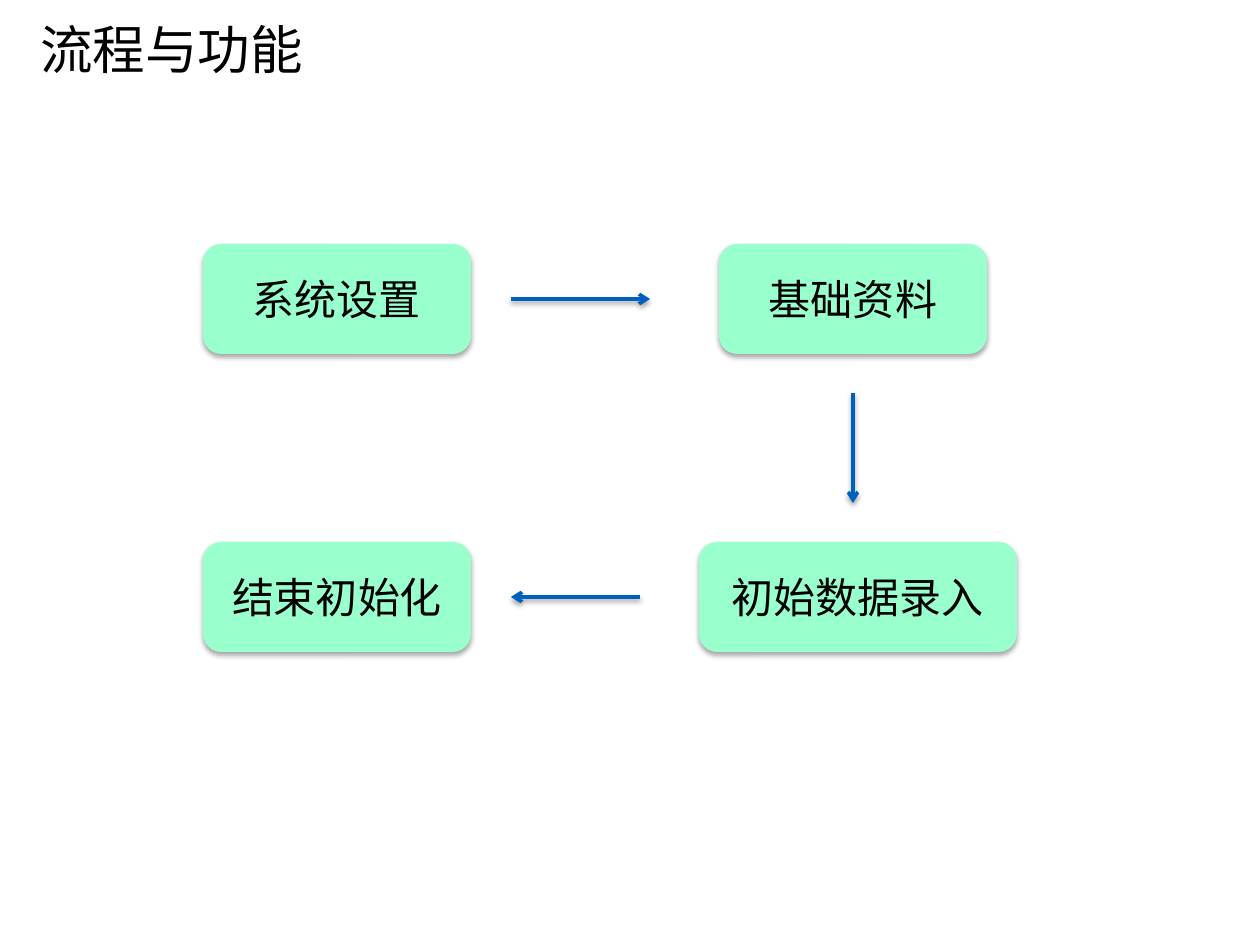
"""Build the process and functions flow slide."""
from lxml import etree
from pptx import Presentation
from pptx.dml.color import RGBColor
from pptx.enum.shapes import MSO_CONNECTOR, MSO_SHAPE
from pptx.enum.text import MSO_ANCHOR, PP_ALIGN
from pptx.oxml.ns import qn
from pptx.util import Emu, Pt

ROUNDED = MSO_SHAPE.ROUNDED_RECTANGLE
STRAIGHT = MSO_CONNECTOR.STRAIGHT
MIDDLE = MSO_ANCHOR.MIDDLE
LEFT, CENTER = PP_ALIGN.LEFT, PP_ALIGN.CENTER

SLIDE = (1260, 945)
FONT = "Noto Sans CJK SC"
COLORS = {"text": "000000", "step": "99FFCC", "arrow": "0060C0", "shadow": "000000"}

TITLE = ("流程与功能", (28, 0, 997, 96))
STEP_HEIGHT = 110
TOP_ROW, BOTTOM_ROW = 244, 542
STEPS = [
    ("系统设置", 203, TOP_ROW, 268),
    ("基础资料", 719, TOP_ROW, 268),
    ("初始数据录入", 699, BOTTOM_ROW, 318),
    ("结束初始化", 203, BOTTOM_ROW, 268),
]
TOP_MIDDLE, BOTTOM_MIDDLE = (row + STEP_HEIGHT // 2 for row in (TOP_ROW, BOTTOM_ROW))
ARROWS = [
    (511, TOP_MIDDLE, 650, TOP_MIDDLE),
    (853, 393, 853, 503),
    (640, BOTTOM_MIDDLE, 511, BOTTOM_MIDDLE),
]


def px(*values):
    return [Emu(round(value * 914400 / 126)) for value in values]


def color(name):
    return RGBColor.from_string(COLORS[name])


def write(shape, text, size, align):
    frame = shape.text_frame
    for name, value in {"word_wrap": True, "vertical_anchor": MIDDLE}.items():
        setattr(frame, name, value)
    para = frame.paragraphs[0]
    para.alignment = align
    span = para.add_run()
    span.text = text
    for name, value in {"name": FONT, "size": Pt(size)}.items():
        setattr(span.font, name, value)
    span.font.color.rgb = color("text")
    etree.SubElement(span.font._element, qn("a:ea"), typeface=FONT)


def add_shadow(shape, distance, opacity):
    effects = etree.SubElement(shape._element.spPr, qn("a:effectLst"))
    shadow = etree.SubElement(
        effects, qn("a:outerShdw"), blurRad=str(Pt(3.1)), dist=str(Pt(distance)),
        dir="5400000", algn="ctr", rotWithShape="0")
    tint = etree.SubElement(shadow, qn("a:srgbClr"), val=COLORS["shadow"])
    etree.SubElement(tint, qn("a:alpha"), val=str(opacity * 1000))


def add_step(page, text, left, top, width):
    box = page.shapes.add_shape(ROUNDED, *px(left, top, width, STEP_HEIGHT))
    box.fill.solid()
    box.fill.fore_color.rgb = color("step")
    box.line.fill.background()
    add_shadow(box, 1.8, 35)
    write(box, text, 24, CENTER)


def add_arrow(page, ends):
    arrow = page.shapes.add_connector(STRAIGHT, *px(*ends))
    arrow.line.width = Pt(2)
    arrow.line.color.rgb = color("arrow")
    etree.SubElement(arrow.line._get_or_add_ln(), qn("a:tailEnd"), type="arrow")
    add_shadow(arrow, 1.6, 38)


def main():
    deck = Presentation()
    deck.slide_width, deck.slide_height = px(*SLIDE)
    page = deck.slides.add_slide(deck.slide_layouts[6])
    text, place = TITLE
    write(page.shapes.add_textbox(*px(*place)), text, 30, LEFT)
    for step in STEPS:
        add_step(page, *step)
    for ends in ARROWS:
        add_arrow(page, ends)
    deck.save("out.pptx")


if __name__ == "__main__":
    main()
